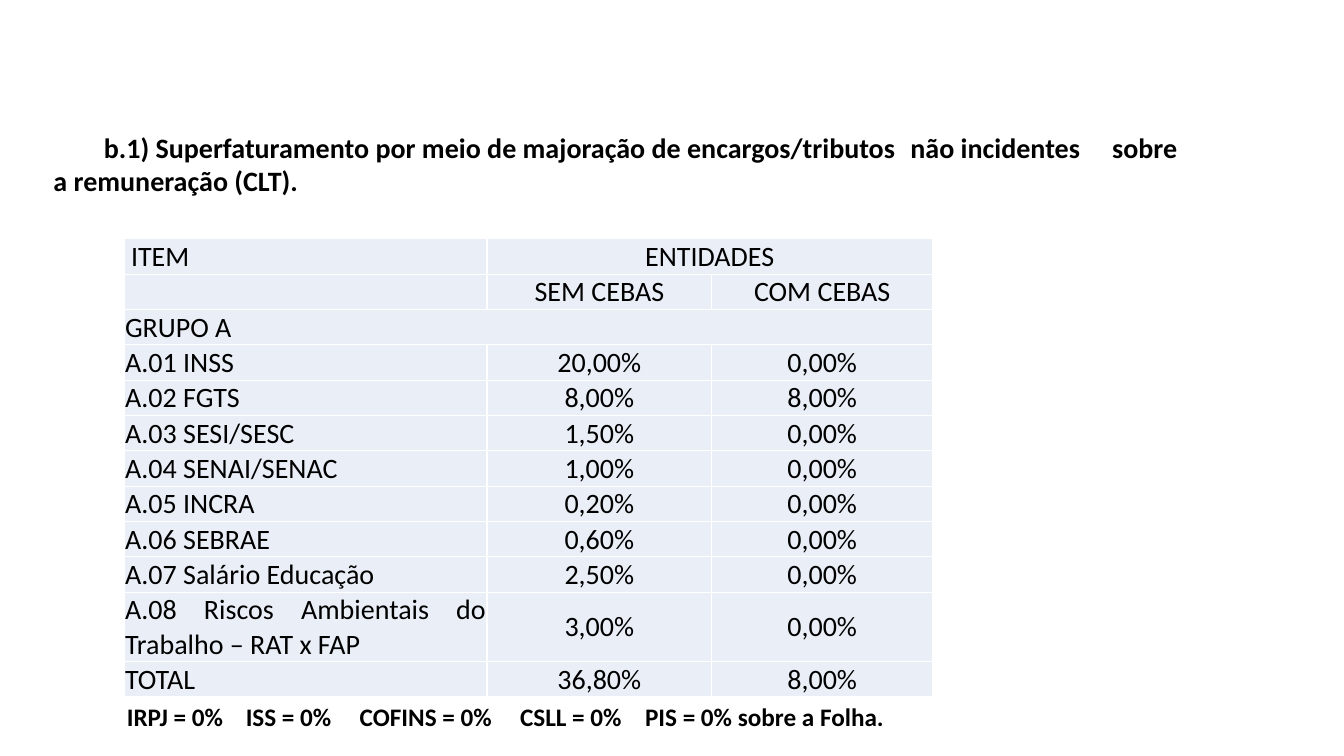
import pptx
import pptx.dml.color
import pptx.enum.text
import pptx.util
from lxml import etree
from pptx.util import Inches

ALIGN = pptx.enum.text.PP_ALIGN
ANCHOR = pptx.enum.text.MSO_ANCHOR
FONT = "Calibri"
BLACK = "000000"
CELL_FILL = "EAEFF7"

TITLE = ("\tb.1) Superfaturamento por meio de majoração de encargos/tributos "
         "\tnão incidentes \tsobre a remuneração (CLT).")
HEADER_ROWS = [
    ("ITEM", "ENTIDADES", ""),
    ("", "SEM CEBAS", "COM CEBAS"),
]
CHARGE_ROWS = [
    ("GRUPO A", "", ""),
    ("A.01 INSS", "20,00%", "0,00%"),
    ("A.02 FGTS", "8,00%", "8,00%"),
    ("A.03 SESI/SESC", "1,50%", "0,00%"),
    ("A.04 SENAI/SENAC", "1,00%", "0,00%"),
    ("A.05 INCRA", "0,20%", "0,00%"),
    ("A.06 SEBRAE", "0,60%", "0,00%"),
    ("A.07 Salário Educação", "2,50%", "0,00%"),
    ("A.08 Riscos Ambientais do Trabalho – RAT x FAP", "3,00%", "0,00%"),
    ("TOTAL", "36,80%", "8,00%"),
]
TAXES = ["IRPJ = 0%", "ISS = 0%", "COFINS = 0%", "CSLL = 0%", "PIS = 0% sobre a Folha."]
TAX_TABS = [1.18, 2.31, 3.9, 5.14]
COLUMN_WIDTHS = [3.6, 2.23, 2.19]
ROW_HEIGHT = 0.34
TWO_LINE_ROW = 10


def color(hex_value):
    return pptx.dml.color.RGBColor.from_string(hex_value)


def add_run(paragraph, text, size, bold=False):
    run = paragraph.add_run()
    run.text = text
    run.font.name = FONT
    run.font.size = pptx.util.Pt(size)
    run.font.bold = bold
    run.font.color.rgb = color(BLACK)


def add_tab_stops(paragraph, positions):
    properties = paragraph._p.get_or_add_pPr()
    namespace = "{http://schemas.openxmlformats.org/drawingml/2006/main}"
    tab_list = etree.SubElement(properties, namespace + "tabLst")
    for position in positions:
        etree.SubElement(tab_list, namespace + "tab", pos=str(Inches(position)), algn="l")


def add_title(slide):
    title = slide.shapes.title
    title.left, title.top = Inches(0.43), Inches(1.24)
    title.width, title.height = Inches(11.45), Inches(0.8)
    frame = title.text_frame
    frame.word_wrap = True
    frame.auto_size = pptx.enum.text.MSO_AUTO_SIZE.NONE
    frame.vertical_anchor = ANCHOR.TOP
    paragraph = frame.paragraphs[0]
    paragraph.alignment = ALIGN.LEFT
    add_run(paragraph, TITLE, 20, bold=True)


def add_charges_table(slide):
    rows = HEADER_ROWS + CHARGE_ROWS
    heights = [ROW_HEIGHT * (2 if index == TWO_LINE_ROW else 1) for index in range(len(rows))]
    table = slide.shapes.add_table(
        len(rows), len(COLUMN_WIDTHS), Inches(1.23), Inches(2.37),
        Inches(sum(COLUMN_WIDTHS)), Inches(sum(heights))).table
    table.first_row = False
    table.horz_banding = False
    for column, width in zip(table.columns, COLUMN_WIDTHS):
        column.width = Inches(width)
    for row, height in zip(table.rows, heights):
        row.height = Inches(height)

    for row_index, row in enumerate(rows):
        is_header = row_index < len(HEADER_ROWS)
        for column_index, text in enumerate(row):
            cell = table.cell(row_index, column_index)
            cell.fill.solid()
            cell.fill.fore_color.rgb = color(CELL_FILL)
            cell.margin_left = cell.margin_right = cell.margin_top = Inches(0.01)
            cell.margin_bottom = 0
            cell.vertical_anchor = ANCHOR.BOTTOM if is_header else ANCHOR.MIDDLE
            paragraph = cell.text_frame.paragraphs[0]
            if column_index:
                paragraph.alignment = ALIGN.CENTER
            else:
                paragraph.alignment = ALIGN.LEFT if is_header else ALIGN.JUSTIFY
            if text:
                add_run(paragraph, text, 20)

    table.cell(0, 0).margin_left = Inches(0.07)
    table.cell(0, 1).merge(table.cell(0, 2))
    group_row = len(HEADER_ROWS)
    table.cell(group_row, 0).merge(table.cell(group_row, 2))


def add_tax_note(slide):
    box = slide.shapes.add_textbox(Inches(1.16), Inches(6.89), Inches(7.77), Inches(0.5))
    box.text_frame.word_wrap = True
    paragraph = box.text_frame.paragraphs[0]
    add_tab_stops(paragraph, TAX_TABS)
    paragraph.line_spacing = 1.07
    add_run(paragraph, "\t".join(TAXES), 18, bold=True)


def main():
    presentation = pptx.Presentation()
    presentation.slide_width = Inches(13.33)
    presentation.slide_height = Inches(7.5)
    slide = presentation.slides.add_slide(presentation.slide_layouts[5])
    add_title(slide)
    add_charges_table(slide)
    add_tax_note(slide)
    presentation.save("out.pptx")


if __name__ == "__main__":
    main()
